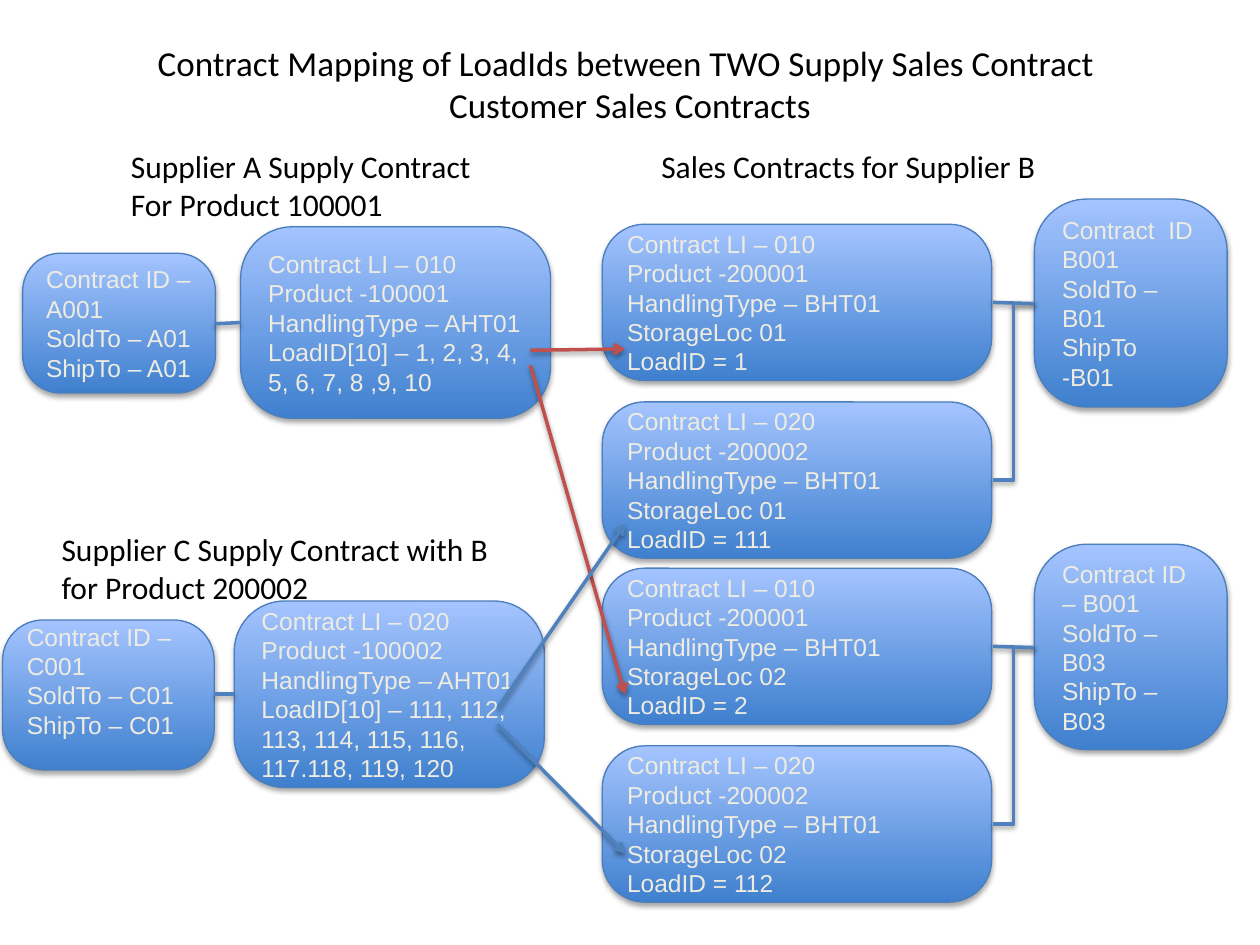
import pptx
import pptx.util
import pptx.dml.color
import pptx.enum.shapes
import pptx.enum.text
import pptx.oxml
import pptx.oxml.ns

COLORS = {
    "top": "A4C4FF", "bottom": "3F80CE", "border": "4B7EBC", "box_text": "EEECE1",
    "text": "000000", "blue": "4F81BD", "red": "C0504D", "shadow": "000000",
}
NS = pptx.oxml.ns.nsdecls("a")


def rgb(name):
    return pptx.dml.color.RGBColor.from_string(COLORS[name])


def write_text(tf, text, size=14, font="Arial", color="box_text", align="LEFT",
               anchor="TOP", tab=None):
    tf.word_wrap = True
    tf.vertical_anchor = getattr(pptx.enum.text.MSO_ANCHOR, anchor)
    for i, line in enumerate(text.split("\n")):
        p = tf.paragraphs[0] if i == 0 else tf.add_paragraph()
        p.text = line
        p.alignment = getattr(pptx.enum.text.PP_ALIGN, align)
        if tab and "\t" in line:
            p._p.get_or_add_pPr().append(pptx.oxml.parse_xml(
                f'<a:tabLst {NS}><a:tab pos="{tab}" algn="l"/></a:tabLst>'))
        for r in p.runs:
            r.font.size = pptx.util.Pt(size)
            r.font.name = font
            r.font.color.rgb = rgb(color)


class Diagram:
    columns, rows = 100, 75
    corner = 0.271

    def __init__(self, prs):
        self.s = prs.slides.add_slide(prs.slide_layouts[6])
        self.col = prs.slide_width / self.columns
        self.row = prs.slide_height / self.rows

    def grid(self, x, y):
        return int(x * self.col), int(y * self.row)

    def shadow(self, alpha, distance):
        return pptx.oxml.parse_xml(
            f'<a:outerShdw {NS} blurRad="{pptx.util.Pt(3.1)}" dist="{pptx.util.Pt(distance)}" '
            f'dir="5400000" rotWithShape="0"><a:srgbClr val="{COLORS["shadow"]}">'
            f'<a:alpha val="{alpha * 1000}"/></a:srgbClr></a:outerShdw>')

    def label(self, x, y, w, h, text, tab=0, **style):
        sp = self.s.shapes.add_textbox(*self.grid(x, y), *self.grid(w, h))
        write_text(sp.text_frame, text, font="Calibri", color="text",
                   tab=int(tab * self.col), **style)

    def box(self, x, y, w, h, text, lift=0):
        sp = self.s.shapes.add_shape(pptx.enum.shapes.MSO_SHAPE.ROUNDED_RECTANGLE,
                                     *self.grid(x, y), *self.grid(w, h))
        sp.adjustments[0] = self.corner
        sp.fill.gradient()
        sp.fill.gradient_angle = 90
        for stop, name in zip(sp.fill.gradient_stops, ("bottom", "top")):
            stop.color.rgb = rgb(name)
        for stop, position in zip(sp.fill.gradient_stops, (0, 1)):
            stop.position = position
        sp.line.color.rgb = rgb("border")
        sp.line.width = pptx.util.Pt(0.75)
        sp.shadow.inherit = False
        sp._element.spPr.find(pptx.oxml.ns.qn("a:effectLst")).append(self.shadow(35, 1.8))
        sp.text_frame.margin_bottom += int(lift * self.row)
        write_text(sp.text_frame, text, anchor="MIDDLE")

    def link(self, start, end, color="blue", kind="STRAIGHT", arrow=False):
        c = self.s.shapes.add_connector(getattr(pptx.enum.shapes.MSO_CONNECTOR, kind),
                                        *self.grid(*start), *self.grid(*end))
        c.line.color.rgb = rgb(color)
        c.line.width = pptx.util.Pt(2)
        if arrow:
            c.line._get_or_add_ln().append(
                pptx.oxml.parse_xml(f'<a:tailEnd {NS} type="arrow"/>'))
        effects = pptx.oxml.parse_xml(f"<a:effectLst {NS}/>")
        effects.append(self.shadow(38, 1.6))
        c._element.spPr.append(effects)


def main():
    prs = pptx.Presentation()
    prs.slide_width = pptx.util.Inches(10)
    prs.slide_height = pptx.util.Inches(7.5)
    d = Diagram(prs)

    d.label(5, 2.9, 90, 7.5, "Contract Mapping of LoadIds between TWO Supply Sales Contract \v"
            "Customer Sales Contracts", size=20, align="CENTER", anchor="MIDDLE")

    d.box(1.8, 20.1, 15.3, 11.1, "Contract ID –A001\nSoldTo – A01\nShipTo – A01")
    d.box(19.1, 18, 24.6, 15.2, "Contract LI – 010\nProduct -100001\nHandlingType – AHT01\n"
          "LoadID[10] – 1, 2, 3, 4, 5, 6, 7, 8 ,9, 10")
    d.box(18.6, 47.7, 24.6, 14.8, "Contract LI – 020\nProduct -100002\nHandlingType – AHT01\n"
          "LoadID[10] – 111, 112, 113, 114, 115, 116, 117.118, 119, 120")

    sales_left, sales_w, sales_h = 47.8, 30.9, 12.4
    sales_right, id_left = 78.8, 82.1
    item_step, group_step = 14.1, 27.3
    contracts = [
        (15.8, 16.5, "Contract  ID\nB001\nSoldTo – B01\nShipTo  -B01", "01", ("1", "111")),
        (43.2, 16.3, "Contract ID – B001\nSoldTo – B03\nShipTo – B03", "02", ("2", "112")),
    ]
    for group, (top, height, text, storage, loads) in enumerate(contracts):
        offset = group * group_step
        d.box(id_left, top, 15.3, height, text)
        for item, load in enumerate(loads):
            d.box(sales_left, 17.8 + offset + item * item_step, sales_w, sales_h,
                  f"Contract LI – 0{item + 1}0\nProduct -20000{item + 1}\n"
                  f"HandlingType – BHT01\nStorageLoc {storage}\nLoadID = {load}")
        hub = (id_left, 24.1 + offset)
        d.link(hub, (sales_right, 24 + offset))
        d.link(hub, (sales_right, 38.1 + offset), kind="ELBOW")

    for start, end, color in [
        ((42.1, 27.8), (49.6, 27.7), "red"),
        ((42.1, 29), (49.6, 55.1), "red"),
        ((39.5, 56.2), (49.6, 41.6), "blue"),
        ((39.5, 57.5), (49.6, 67.7), "blue"),
    ]:
        d.link(start, end, color, arrow=True)

    d.label(9.4, 11.2, 74.9, 7.1, "Supplier A Supply Contract\tSales Contracts for Supplier B\n"
            "For Product 100001", size=18, tab=42.1)
    d.box(0.2, 49.2, 16.8, 11.9, "Contract ID –C001\nSoldTo – C01\nShipTo – C01", lift=2.3)
    d.label(3.9, 41.6, 37.5, 7.1, "Supplier C Supply Contract with B for Product 200002", size=18)
    d.link((17, 25.7), (19.1, 25.6))
    d.link((17, 55.1), (18.6, 55.1))

    prs.save("out.pptx")


if __name__ == "__main__":
    main()
